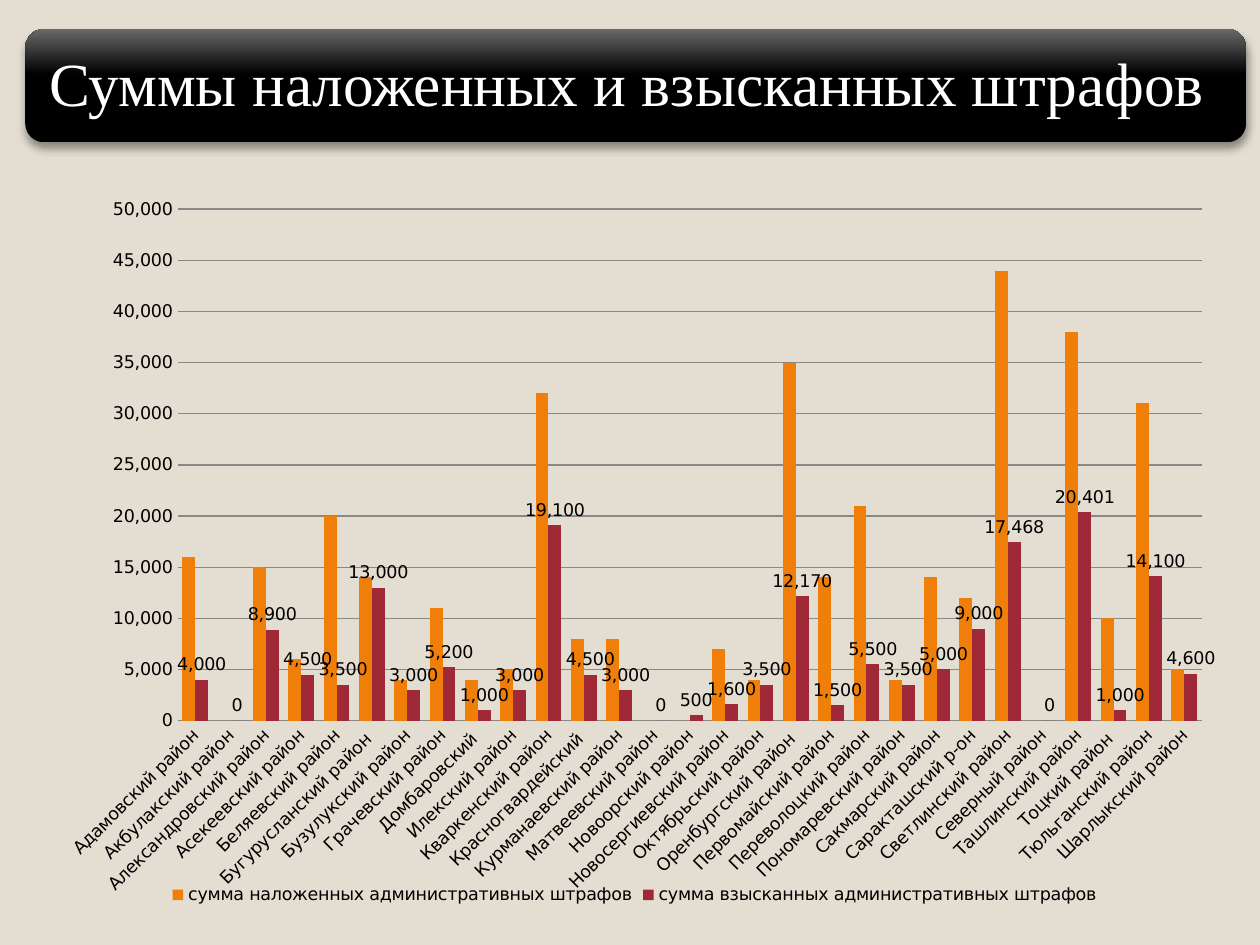
from copy import deepcopy

from lxml.etree import SubElement
from pptx import Presentation
from pptx.chart.data import CategoryChartData
from pptx.dml.color import RGBColor
from pptx.enum.chart import XL_CHART_TYPE, XL_LABEL_POSITION, XL_LEGEND_POSITION, XL_TICK_MARK
from pptx.enum.shapes import MSO_SHAPE
from pptx.enum.text import MSO_ANCHOR
from pptx.oxml import parse_xml
from pptx.oxml.ns import nsdecls, qn
from pptx.util import Inches, Pt

BACKGROUND = RGBColor(0xE3, 0xDE, 0xD1)
BLACK = RGBColor(0, 0, 0)
SHEEN = RGBColor(0x69, 0x69, 0x69)
WHITE = RGBColor(0xFF, 0xFF, 0xFF)
GRID = RGBColor(0x88, 0x88, 0x88)
ORANGE = RGBColor(0xF0, 0x7F, 0x09)
CRIMSON = RGBColor(0x9F, 0x29, 0x36)

TITLE = "Суммы наложенных и взысканных штрафов"
IMPOSED = "сумма наложенных административных штрафов"
COLLECTED = "сумма взысканных административных штрафов"
FINES = [
    ("Адамовский район", 16000, 4000),
    ("Акбулакский район", 0, 0),
    ("Александровский район", 15000, 8900),
    ("Асекеевский район", 6000, 4500),
    ("Беляевский район", 20000, 3500),
    ("Бугурусланский район ", 14000, 13000),
    ("Бузулукский район", 4000, 3000),
    ("Грачевский район", 11000, 5200),
    ("Домбаровский ", 4000, 1000),
    ("Илекский район", 5000, 3000),
    ("Кваркенский район", 32000, 19100),
    ("Красногвардейский ", 8000, 4500),
    ("Курманаевский район", 8000, 3000),
    ("Матвеевский район", 0, 0),
    ("Новоорский район", 0, 500),
    ("Новосергиевский район", 7000, 1600),
    ("Октябрьский район", 4000, 3500),
    ("Оренбургский район ", 35000, 12170),
    ("Первомайский район", 14000, 1500),
    ("Переволоцкий район", 21000, 5500),
    ("Пономаревский район", 4000, 3500),
    ("Сакмарский район", 14000, 5000),
    ("Саракташский р-он", 12000, 9000),
    ("Светлинский район", 44000, 17468),
    ("Северный район", 0, 0),
    ("Ташлинский район", 38000, 20401),
    ("Тоцкий район ", 10000, 1000),
    ("Тюльганский район", 31000, 14100),
    ("Шарлыкский район", 5000, 4600),
]
CHART_WIDTH, CHART_HEIGHT = 9.37, 5.75
PLOT_AREA = {
    "x": 1.06 / CHART_WIDTH,
    "y": 0.19 / CHART_HEIGHT,
    "w": 8.13 / CHART_WIDTH,
    "h": 4.06 / CHART_HEIGHT,
}


def add_title(slide):
    group = slide.shapes.add_group_shape()
    banner = group.shapes.add_shape(
        MSO_SHAPE.ROUNDED_RECTANGLE, Inches(0.2), Inches(0.23), Inches(9.69), Inches(0.9))
    banner.line.fill.background()
    banner.fill.gradient()
    banner.fill.gradient_angle = 90
    first_stop = banner.fill.gradient_stops[0]
    first_stop.color.rgb = BLACK
    stop_list = banner.fill._fill._gradFill.find(qn("a:gsLst"))
    stop_list.insert(1, deepcopy(stop_list[0]))
    for stop, (position, color) in zip(
            banner.fill.gradient_stops, [(0, BLACK), (0.6, BLACK), (1, SHEEN)]):
        stop.position = position
        stop.color.rgb = color
    banner._element.spPr.append(parse_xml(
        f'<a:effectLst {nsdecls("a")}>'
        f'<a:outerShdw blurRad="{Pt(5.2)}" dist="{Pt(3)}" dir="5400000" rotWithShape="0">'
        '<a:srgbClr val="000000"><a:alpha val="40000"/></a:srgbClr>'
        '</a:outerShdw></a:effectLst>'))

    heading = group.shapes.add_textbox(Inches(0.24), Inches(0.28), Inches(9.6), Inches(0.81))
    frame = heading.text_frame
    frame.word_wrap = True
    frame.vertical_anchor = MSO_ANCHOR.MIDDLE
    frame.margin_left = frame.margin_right = Inches(0.15)
    frame.margin_top = frame.margin_bottom = Inches(0.15)
    paragraph = frame.paragraphs[0]
    paragraph.line_spacing = 0.9
    run = paragraph.add_run()
    run.text = TITLE
    run.font.size = Pt(35)
    run.font.name = "Times New Roman"
    run.font.color.rgb = WHITE


def style_font(font):
    font.size = Pt(10)
    font.name = "DejaVu Sans"
    font.color.rgb = BLACK


def place_plot(chart):
    plot_area = chart._chartSpace.chart.plotArea
    for old_layout in plot_area.findall(qn("c:layout")):
        plot_area.remove(old_layout)
    layout = parse_xml(f'<c:layout {nsdecls("c")}/>')
    manual = SubElement(layout, qn("c:manualLayout"))
    settings = {"layoutTarget": "inner", "xMode": "edge", "yMode": "edge", **PLOT_AREA}
    for tag, value in settings.items():
        SubElement(manual, qn(f"c:{tag}")).set("val", str(value))
    plot_area.insert(0, layout)


def add_fines_chart(slide):
    districts, imposed, collected = zip(*FINES)
    data = CategoryChartData(number_format="#,##0")
    data.categories = districts
    data.add_series(IMPOSED, imposed)
    data.add_series(COLLECTED, collected)
    chart = slide.shapes.add_chart(
        XL_CHART_TYPE.COLUMN_CLUSTERED,
        Inches(0.35), Inches(1.47), Inches(CHART_WIDTH), Inches(CHART_HEIGHT), data).chart
    style_font(chart.font)
    chart.has_title = False
    chart.has_legend = True
    chart.legend.position = XL_LEGEND_POSITION.BOTTOM
    chart.legend.include_in_layout = True

    plot = chart.plots[0]
    plot.gap_width = 75
    plot.overlap = 0
    plot.vary_by_categories = False
    for series, color in zip(plot.series, (ORANGE, CRIMSON)):
        series.format.fill.solid()
        series.format.fill.fore_color.rgb = color
    labels = plot.series[1].data_labels
    labels.show_value = True
    labels.number_format = "#,##0"
    labels.number_format_is_linked = False
    labels.position = XL_LABEL_POSITION.OUTSIDE_END
    style_font(labels.font)

    for axis in (chart.category_axis, chart.value_axis):
        axis.major_tick_mark = axis.minor_tick_mark = XL_TICK_MARK.NONE
        style_font(axis.tick_labels.font)
    chart.category_axis.format.line.color.rgb = GRID
    chart.category_axis._element.find(qn("c:txPr")).find(qn("a:bodyPr")).set("rot", "-2700000")
    amounts = chart.value_axis
    amounts.minimum_scale, amounts.maximum_scale, amounts.major_unit = 0, 50000, 5000
    amounts.tick_labels.number_format = "#,##0"
    amounts.tick_labels.number_format_is_linked = False
    amounts.format.line.fill.background()
    amounts.major_gridlines.format.line.color.rgb = GRID
    amounts.major_gridlines.format.line.width = Pt(0.75)
    place_plot(chart)


def main():
    deck = Presentation()
    deck.slide_width, deck.slide_height = Inches(10), Inches(7.5)
    slide = deck.slides.add_slide(deck.slide_layouts[6])
    slide.background.fill.solid()
    slide.background.fill.fore_color.rgb = BACKGROUND
    add_title(slide)
    add_fines_chart(slide)
    deck.save("out.pptx")


if __name__ == "__main__":
    main()
